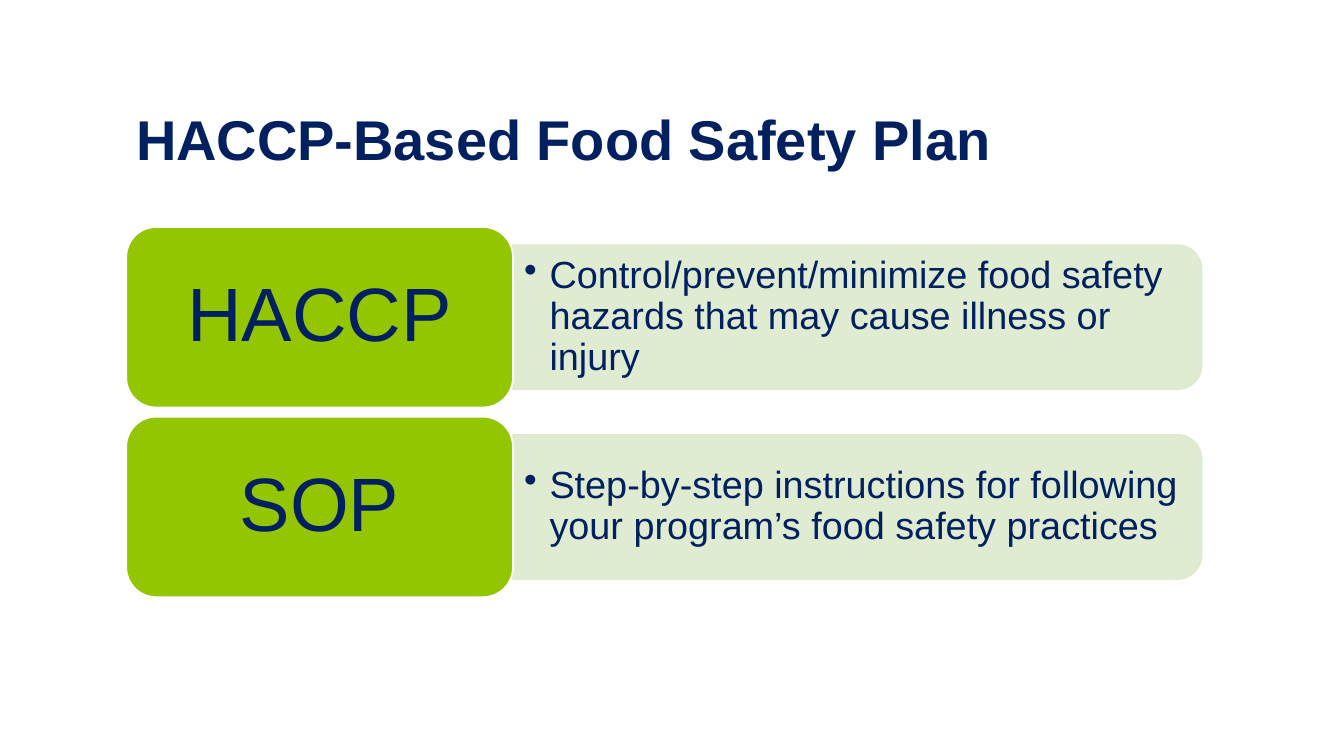
from lxml import etree
from pptx import Presentation
from pptx.dml.color import RGBColor
from pptx.enum.shapes import MSO_SHAPE
from pptx.enum.text import MSO_ANCHOR, PP_ALIGN
from pptx.oxml.ns import qn
from pptx.util import Cm, Pt

ROUNDED = MSO_SHAPE.ROUNDED_RECTANGLE
ROUND_TOP = MSO_SHAPE.ROUND_2_SAME_RECTANGLE
MIDDLE = MSO_ANCHOR.MIDDLE
LEFT, CENTER = PP_ALIGN.LEFT, PP_ALIGN.CENTER

COLORS = {"navy": "002060", "green": "94C600", "pale": "DCEACC", "white": "FFFFFF"}

TERMS = [
    ("HACCP", "Control/prevent/minimize food safety hazards that may cause illness or injury"),
    ("SOP", "Step-by-step instructions for following your program’s food safety practices"),
]

# Lengths in centimetres
MARGIN = 3.18
FIRST_TOP, ROW_PITCH = 5.72, 4.78
LABEL_WIDTH, LABEL_HEIGHT = 9.75, 4.55
PANEL_WIDTH, PANEL_HEIGHT = 17.35, 3.63
DETAIL_WIDTH, DETAIL_HEIGHT = 17.17, 3.28
BULLET_INDENT = 0.64


def set_all(target, values):
    for name, value in values.items():
        setattr(target, name, value)


class PlanSlide:
    font = "Arial"
    line_width = 1.25

    def __init__(self, presentation):
        self.slide = presentation.slides.add_slide(presentation.slide_layouts[6])

    def add_text(self, shape, text, size, bold=False, align=LEFT, spacing=1.0, insets=(0.25, 0.13)):
        """Fill a shape with one vertically centred paragraph and return it."""
        side, end = map(Cm, insets)
        frame = shape.text_frame
        set_all(frame, {
            "word_wrap": True, "vertical_anchor": MIDDLE,
            "margin_left": side, "margin_right": side,
            "margin_top": end, "margin_bottom": end,
        })
        paragraph = frame.paragraphs[0]
        set_all(paragraph, {"alignment": align, "line_spacing": spacing})
        run = paragraph.add_run()
        run.text = text
        set_all(run.font, {"name": self.font, "size": Pt(size), "bold": bold})
        run.font.color.rgb = RGBColor.from_string(COLORS["navy"])
        return paragraph

    def text_box(self, left, top, width, height, text, size, **style):
        box = self.slide.shapes.add_textbox(Cm(left), Cm(top), Cm(width), Cm(height))
        return self.add_text(box, text, size, **style)

    def bullet_box(self, left, top, width, height, text, size, **style):
        paragraph = self.text_box(left, top, width, height, text, size, **style)
        properties = paragraph._p.get_or_add_pPr()
        indent = Cm(BULLET_INDENT)
        properties.set("marL", str(indent))
        properties.set("indent", str(-indent))
        etree.SubElement(properties, qn("a:buChar"), char="•")

    def block(self, kind, left, top, width, height, fill, line, opacity=100):
        shape = self.slide.shapes.add_shape(kind, Cm(left), Cm(top), Cm(width), Cm(height))
        shape.shadow.inherit = False
        shape.fill.solid()
        shape.line.width = Pt(self.line_width)
        shape.line.fill.solid()
        for paint, color in ((shape.fill, fill), (shape.line.fill, line)):
            paint.fore_color.rgb = RGBColor.from_string(COLORS[color])
        if opacity < 100:
            for color_element in shape._element.spPr.iter(qn("a:srgbClr")):
                etree.SubElement(color_element, qn("a:alpha"), val=str(opacity * 1000))
        return shape

    def panel(self, left, middle):
        """Draw a pale panel rounded on its right side only."""
        center = left + PANEL_WIDTH / 2
        shape = self.block(ROUND_TOP, center - PANEL_HEIGHT / 2, middle - PANEL_WIDTH / 2,
                           PANEL_HEIGHT, PANEL_WIDTH, "pale", "pale", opacity=90)
        shape.rotation = 90

    def term_row(self, top, term, detail):
        middle = top + LABEL_HEIGHT / 2
        panel_left = MARGIN + LABEL_WIDTH
        self.panel(panel_left, middle)
        self.bullet_box(panel_left, middle - DETAIL_HEIGHT / 2, DETAIL_WIDTH, DETAIL_HEIGHT,
                        detail, 27, spacing=0.9, insets=(0.28, 0.15))
        label = self.block(ROUNDED, MARGIN, top, LABEL_WIDTH, LABEL_HEIGHT, "green", "white")
        self.add_text(label, term, 54, align=CENTER, spacing=0.9, insets=(0.58, 0.28))


def main():
    presentation = Presentation()
    set_all(presentation, {"slide_width": Cm(33.87), "slide_height": Cm(19.05)})
    plan = PlanSlide(presentation)
    plan.text_box(MARGIN, 1.9, 27.1, 3.18, "HACCP-Based Food Safety Plan", 40, bold=True)
    for row, (term, detail) in enumerate(TERMS):
        plan.term_row(FIRST_TOP + row * ROW_PITCH, term, detail)
    presentation.save("out.pptx")


if __name__ == "__main__":
    main()
